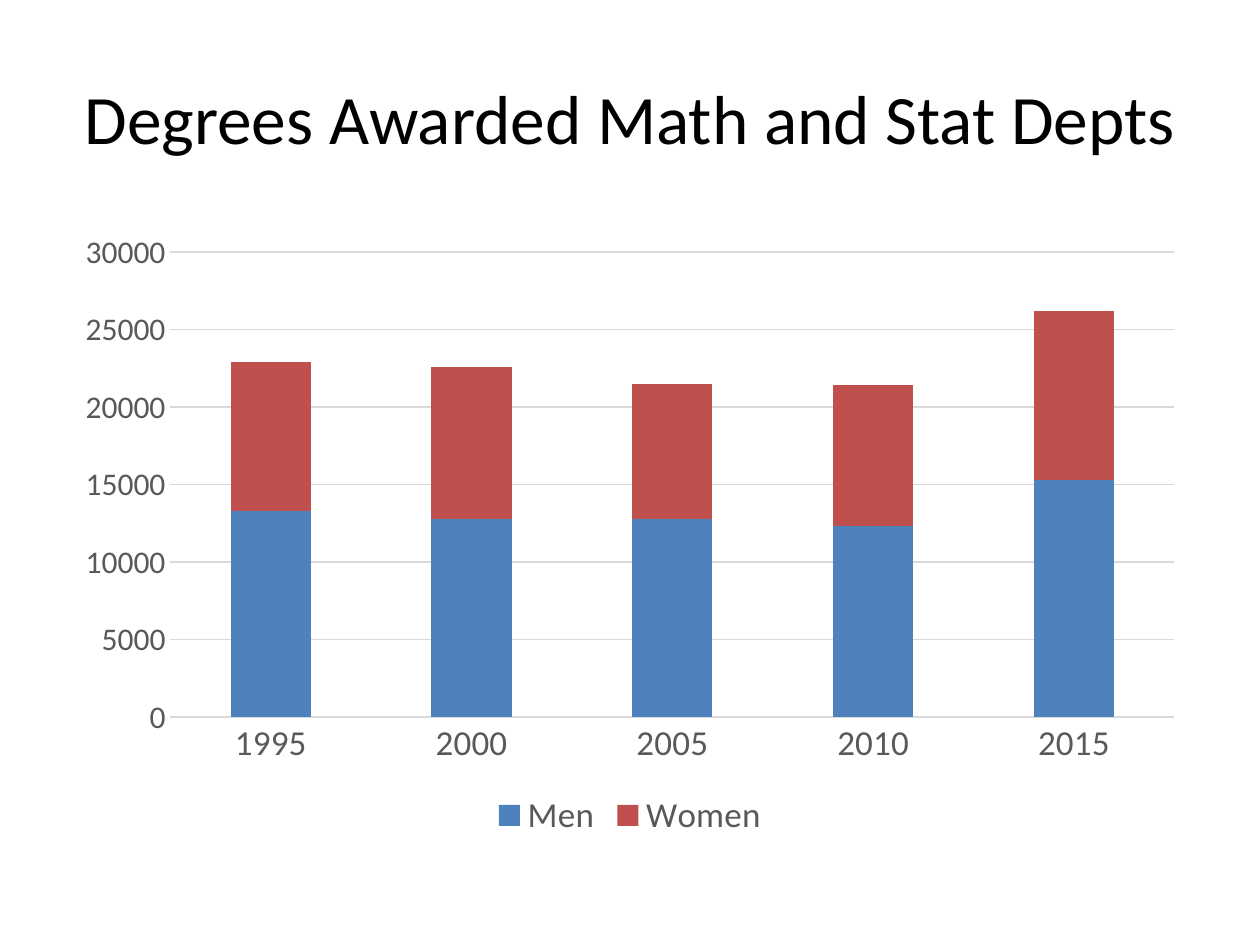
"""Build a slide with a stacked column chart of mathematics and statistics degrees."""
import pptx
import pptx.chart.data
import pptx.dml.color
import pptx.enum.chart
import pptx.enum.text
import pptx.util

Pt = pptx.util.Pt
FONT = "Calibri"
COLORS = {
    "title": "000000",
    "label": "595959",
    "grid": "D9D9D9",
    "Men": "4F81BD",
    "Women": "C0504D",
}
DEGREES = {
    "Men": (13300, 12800, 12800, 12300, 15300),
    "Women": (9600, 9800, 8700, 9100, 10900),
}


def format_font(font, size, color):
    font.name = FONT
    font.size = Pt(size)
    font.color.rgb = pptx.dml.color.RGBColor.from_string(COLORS[color])


def add_text(slide, text, *, left, top, width, height, size, color):
    shape = slide.shapes.add_textbox(Pt(left), Pt(top), Pt(width), Pt(height))
    frame = shape.text_frame
    frame.word_wrap = True
    frame.vertical_anchor = pptx.enum.text.MSO_ANCHOR.MIDDLE
    paragraph = frame.paragraphs[0]
    paragraph.alignment = pptx.enum.text.PP_ALIGN.CENTER
    run = paragraph.add_run()
    run.text = text
    format_font(run.font, size, color)


presentation = pptx.Presentation()
presentation.slide_width = Pt(720)
presentation.slide_height = Pt(540)
slide = presentation.slides.add_slide(presentation.slide_layouts[6])

add_text(slide, "Degrees Awarded Math and Stat Depts", left=36, top=21.6,
         width=648, height=90, size=39.6, color="title")

chart_data = pptx.chart.data.CategoryChartData()
chart_data.categories = [str(year) for year in range(1995, 2016, 5)]
for name, values in DEGREES.items():
    chart_data.add_series(name, values)
chart = slide.shapes.add_chart(
    pptx.enum.chart.XL_CHART_TYPE.COLUMN_STACKED,
    Pt(36), Pt(126), Pt(648), Pt(356.4), chart_data).chart
chart.has_title = False
format_font(chart.font, 10, "title")

plot = chart.plots[0]
plot.gap_width = 150
plot.overlap = 100
plot.vary_by_categories = False
for series in plot.series:
    series.format.fill.solid()
    series.format.fill.fore_color.rgb = pptx.dml.color.RGBColor.from_string(COLORS[series.name])

category_axis = chart.category_axis
value_axis = chart.value_axis
for axis, size in ((category_axis, 20), (value_axis, 18)):
    axis.major_tick_mark = pptx.enum.chart.XL_TICK_MARK.NONE
    axis.minor_tick_mark = pptx.enum.chart.XL_TICK_MARK.NONE
    format_font(axis.tick_labels.font, size, "label")
value_axis.minimum_scale = 0
value_axis.maximum_scale = 30000
value_axis.major_unit = 5000
value_axis.has_major_gridlines = True
value_axis.format.line.fill.background()
for line in (category_axis.format.line, value_axis.major_gridlines.format.line):
    line.color.rgb = pptx.dml.color.RGBColor.from_string(COLORS["grid"])
    line.width = Pt(0.75)

chart.has_legend = True
chart.legend.position = pptx.enum.chart.XL_LEGEND_POSITION.BOTTOM
chart.legend.include_in_layout = False
format_font(chart.legend.font, 20, "label")

presentation.save("out.pptx")
